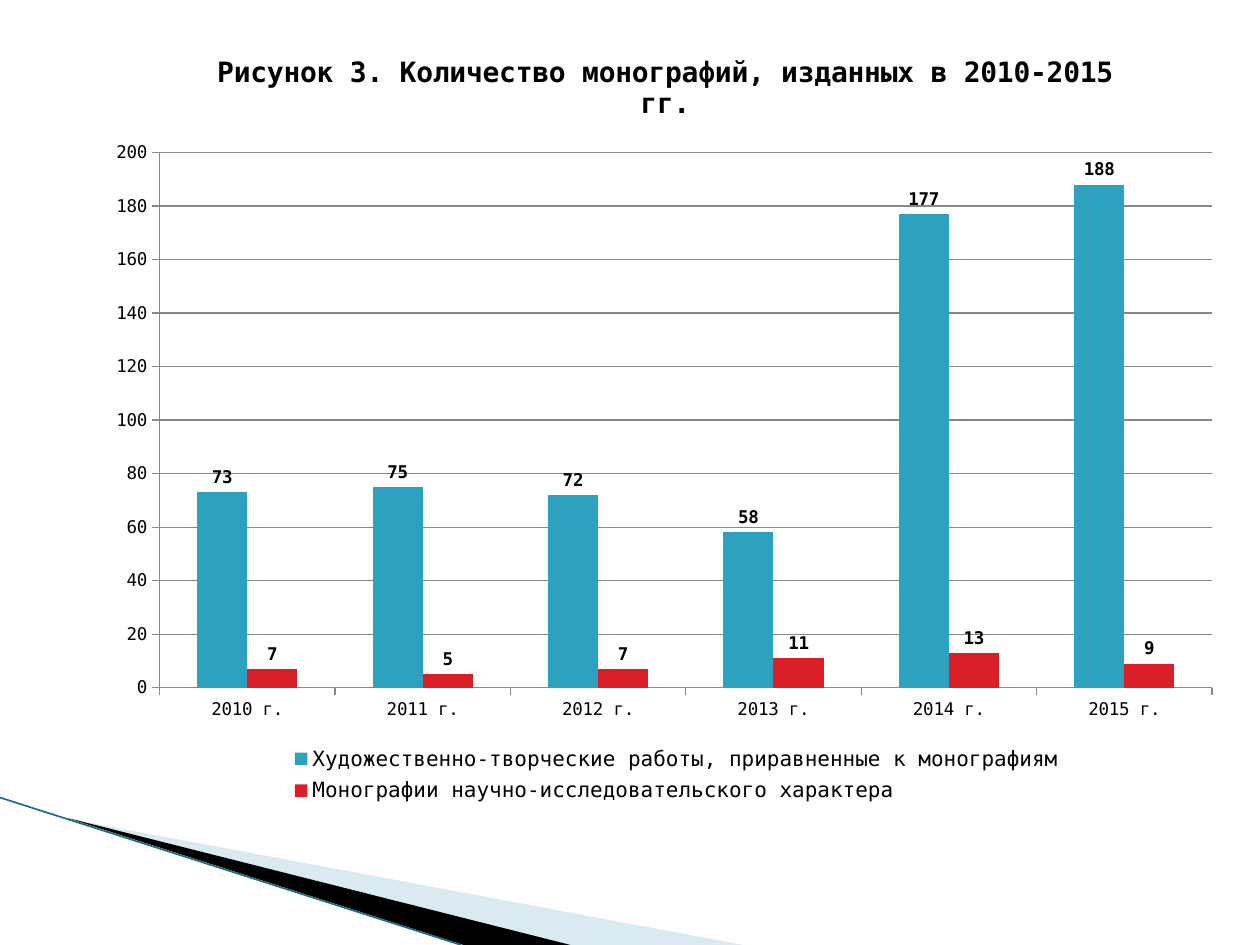
from dataclasses import dataclass, field

from lxml.etree import SubElement
from pptx import Presentation
from pptx.chart.data import CategoryChartData
from pptx.dml.color import RGBColor
from pptx.enum.chart import XL_CHART_TYPE, XL_LABEL_POSITION, XL_LEGEND_POSITION, XL_TICK_MARK
from pptx.enum.shapes import MSO_CONNECTOR
from pptx.oxml.ns import qn
from pptx.util import Inches, Pt

COLORS = {"text": "000000", "creative": "2DA2BF", "research": "DA1F28",
          "axis": "878787", "pale": "A0CBDC", "dark": "000000", "edge": "1B6F85"}
YEARS = [f"{year} г." for year in range(2010, 2016)]
SERIES = [
    ("Художественно-творческие работы, приравненные к монографиям",
     (73, 75, 72, 58, 177, 188), "creative"),
    ("Монографии научно-исследовательского характера",
     (7, 5, 7, 11, 13, 9), "research"),
]


def color(name):
    """Return the palette colour with this name."""
    return RGBColor.from_string(COLORS[name])


def write(frame, text, **style):
    """Put text in a frame and format its run."""
    run = frame.paragraphs[0].add_run()
    run.text = text
    apply_font(run.font, **style)


def apply_font(font, name, size, bold=False, tint="text"):
    """Set the face, size, weight and colour of a font."""
    font.name, font.size, font.bold = name, Pt(size), bold
    font.color.rgb = color(tint)


def manual_layout(x, y, w, h, inner=False):
    """Build a fixed chart layout from shares of the chart area."""
    def fill(parent):
        for old in parent.findall(qn("c:layout")):
            parent.remove(old)
        layout = SubElement(parent, qn("c:layout"))
        manual = SubElement(layout, qn("c:manualLayout"))
        settings = [("layoutTarget", "inner")] if inner else []
        settings += [("xMode", "edge"), ("yMode", "edge"),
                     ("x", x), ("y", y), ("w", w), ("h", h)]
        for tag, value in settings:
            SubElement(manual, qn(f"c:{tag}")).set("val", str(value))
        return layout
    return fill


@dataclass
class SlideBuilder:
    """Hold the style and the current slide on a grid of 100 columns by 75 rows."""
    slide: object
    face: str = "DejaVu Sans Mono"
    cell: int = field(default=Inches(0.1))

    def grid(self, *lengths):
        """Turn grid columns or rows into slide lengths."""
        return [round(length * self.cell) for length in lengths]

    def wedge(self, points, tint, opacity=100):
        """Draw a filled outline through grid points."""
        start, *rest = [tuple(self.grid(*point)) for point in points]
        outline = self.slide.shapes.build_freeform(*start)
        outline.add_line_segments(rest, close=True)
        shape = outline.convert_to_shape()
        shape.shadow.inherit = False
        shape.line.fill.background()
        shape.fill.solid()
        shape.fill.fore_color.rgb = color(tint)
        if opacity < 100:
            rgb = shape.fill._xPr.find(qn("a:solidFill"))[0]
            SubElement(rgb, qn("a:alpha")).set("val", str(opacity * 1000))

    def line(self, start, end, tint, width):
        """Draw a straight line between grid points."""
        edge = self.slide.shapes.add_connector(
            MSO_CONNECTOR.STRAIGHT, *self.grid(*start, *end))
        edge.line.color.rgb = color(tint)
        edge.line.width = Pt(width)
        SubElement(edge._element.spPr, qn("a:effectLst"))

    def column_chart(self, box, title, categories, series):
        """Add a clustered column chart with title, labels and legend."""
        data = CategoryChartData()
        data.categories = categories
        for name, values, _ in series:
            data.add_series(name, values)
        chart = self.slide.shapes.add_chart(
            XL_CHART_TYPE.COLUMN_CLUSTERED, *self.grid(*box), data).chart
        apply_font(chart.font, self.face, 10)
        chart.has_title = True
        write(chart.chart_title.text_frame, title, name=self.face, size=16, bold=True)
        chart.chart_title.include_in_layout = False
        self.bars(chart.plots[0], series)
        self.axes(chart)
        chart.has_legend = True
        legend = chart.legend
        legend.position = XL_LEGEND_POSITION.BOTTOM
        legend.include_in_layout = False
        apply_font(legend.font, self.face, 12)
        position = legend._element.find(qn("c:legendPos"))
        position.addnext(manual_layout(0.16, 0.91, 0.7, 0.09)(legend._element))
        area = chart._chartSpace.chart.plotArea
        area.insert(0, manual_layout(0.057, 0.161, 0.922, 0.683, inner=True)(area))

    def bars(self, plot, series):
        """Colour and label the columns."""
        plot.gap_width, plot.overlap = 150, 0
        plot.vary_by_categories = False
        for bar, (_, _, tint) in zip(plot.series, series):
            bar.format.fill.solid()
            bar.format.fill.fore_color.rgb = color(tint)
            bar.invert_if_negative = False
            labels = bar.data_labels
            labels.show_value = True
            labels.position = XL_LABEL_POSITION.OUTSIDE_END
            apply_font(labels.font, self.face, 10, bold=True)

    def axes(self, chart):
        """Format both axes and the gridlines."""
        values = chart.value_axis
        values.minimum_scale, values.maximum_scale, values.major_unit = 0, 200, 20
        values.has_major_gridlines = True
        for axis in (chart.category_axis, values):
            axis.major_tick_mark = XL_TICK_MARK.OUTSIDE
            apply_font(axis.tick_labels.font, self.face, 10)
        for part in (chart.category_axis, values, values.major_gridlines):
            part.format.line.color.rgb = color("axis")
            part.format.line.width = Pt(0.75)


def main():
    """Build and save the slide."""
    deck = Presentation()
    deck.slide_width, deck.slide_height = Inches(10), Inches(7.5)
    builder = SlideBuilder(deck.slides.add_slide(deck.slide_layouts[6]))
    builder.wedge([(5.5, 65), (59, 75), (45.3, 75)], "pale", opacity=40)
    builder.wedge([(5.3, 64.9), (45.3, 75), (36.8, 75)], "dark")
    builder.line((0, 63.3), (36.6, 75), "edge", 0.95)
    builder.column_chart((7.5, 2.1, 90.6, 62.2),
                         "Рисунок 3. Количество монографий, изданных в 2010-2015 гг.",
                         YEARS, SERIES)
    deck.save("out.pptx")


if __name__ == "__main__":
    main()
